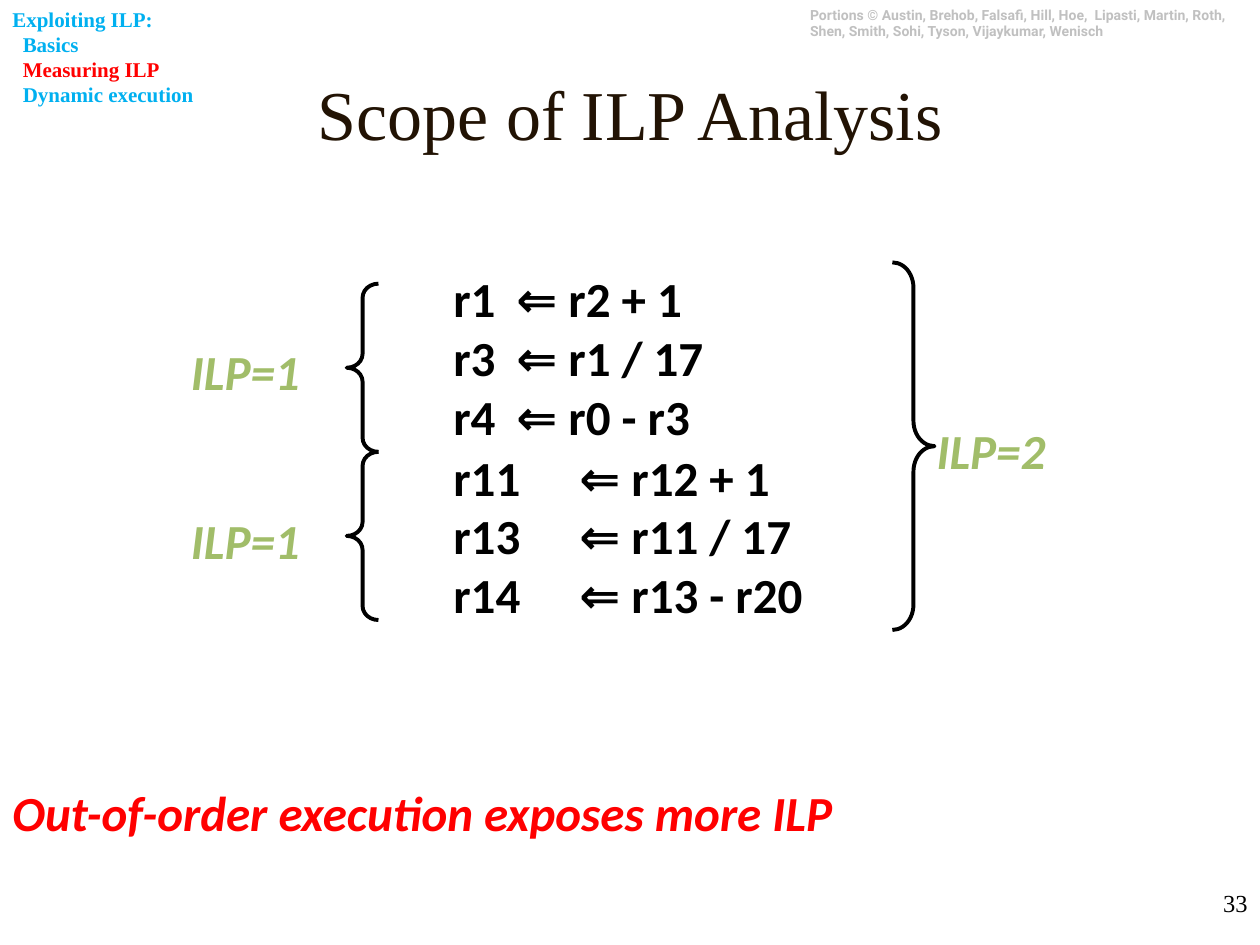
from lxml import etree
from pptx import Presentation
from pptx import util as u
from pptx.dml.color import RGBColor
from pptx.enum import shapes, text
from pptx.oxml import ns

BLACK, RED, BLUE, GREEN = "000000", "FF0000", "00B0F0", "A1BD69"
ALIGN = text.PP_ALIGN
SHAPE = shapes.MSO_SHAPE

deck = Presentation()
deck.slide_width, deck.slide_height = u.Cm(25.4), u.Cm(19.05)
slide = deck.slides.add_slide(deck.slide_layouts[6])


def paint(part, color):
    part.rgb = RGBColor.from_string(color)


def write(lines, x, y, w, h, size=28, font="Calibri", color=BLACK, bold=True,
          slant=False, align=ALIGN.LEFT, anchor=text.MSO_ANCHOR.TOP,
          wrap=True, tab=None):
    """Add a text box, one paragraph per line; lengths are in centimetres."""
    box = slide.shapes.add_textbox(u.Cm(x), u.Cm(y), u.Cm(w), u.Cm(h))
    frame = box.text_frame
    frame.word_wrap = wrap
    frame.vertical_anchor = anchor
    frame.text = "\n".join(lines)
    for para in frame.paragraphs:
        para.alignment = align
        face = para.runs[0].font
        face.name, face.size = font, u.Pt(size)
        face.bold, face.italic = bold, slant
        paint(face.color, color)
        if tab:
            stops = etree.SubElement(para._p.get_or_add_pPr(), ns.qn("a:tabLst"))
            etree.SubElement(stops, ns.qn("a:tab"), pos=str(u.Cm(tab)), algn="l")
    return frame


write(["Portions © Austin, Brehob, Falsafi, Hill, Hoe,  Lipasti, Martin, Roth, "
       "Shen, Smith, Sohi, Tyson, Vijaykumar, Wenisch"],
      16.08, 0, 9.32, 0.94, size=8, font="Roboto", color="C0C0C0")
write(["Scope of ILP Analysis"], 1.06, 0.74, 23.29, 3.07, size=40,
      font="Times New Roman", color="221304", bold=False,
      align=ALIGN.CENTER, anchor=text.MSO_ANCHOR.MIDDLE)

# Code, in two groups of three instructions
write(["r1\t⇐ r2 + 1", "r3\t⇐ r1 / 17", "r4\t⇐ r0 - r3"],
      8.89, 5.29, 8.03, 3.81, tab=1.27)
write(["r11\t⇐ r12 + 1", "r13\t⇐ r11 / 17", "r14\t⇐ r13 - r20"],
      8.89, 8.89, 8.03, 5.05, tab=2.54)

# Braces and the ILP that each one spans
left, right = SHAPE.LEFT_BRACE, SHAPE.RIGHT_BRACE
for kind, bend, x, y, w, h, label, tx, ty in (
        (right, 0.6, 17.99, 5.29, 0.85, 7.41, "ILP=2", 18.63, 8.36),
        (left, 0.44, 6.99, 5.72, 0.64, 3.39, "ILP=1", 3.6, 6.77),
        (left, 0.44, 6.99, 9.11, 0.64, 3.39, "ILP=1", 3.6, 10.16)):
    write([label], tx, ty, 2.7, 1.45, color=GREEN, slant=True, wrap=False)
    brace = slide.shapes.add_shape(kind, u.Cm(x), u.Cm(y), u.Cm(w), u.Cm(h))
    brace.adjustments[0] = bend
    brace.shadow.inherit = False
    brace.fill.background()
    brace.line.width = u.Pt(2.25)
    paint(brace.line.color, BLACK)

write(["Out-of-order execution exposes more ILP"],
      0, 15.66, 24.95, 1.45, color=RED, slant=True)

# Outline with the current topic in red
menu = write(["Exploiting ILP:", "Basics", "Measuring ILP", "Dynamic execution"],
             0, 0, 4.42, 2.31, size=12, font="Times New Roman", color=BLUE)
for para in menu.paragraphs[1:]:
    para._p.get_or_add_pPr().set("marL", str(u.Cm(0.21)))
paint(menu.paragraphs[2].runs[0].font.color, RED)

write(["33"], 20.11, 17.78, 5.29, 1.27, size=14, font="Times New Roman",
      bold=False, align=ALIGN.RIGHT)

deck.save("out.pptx")
